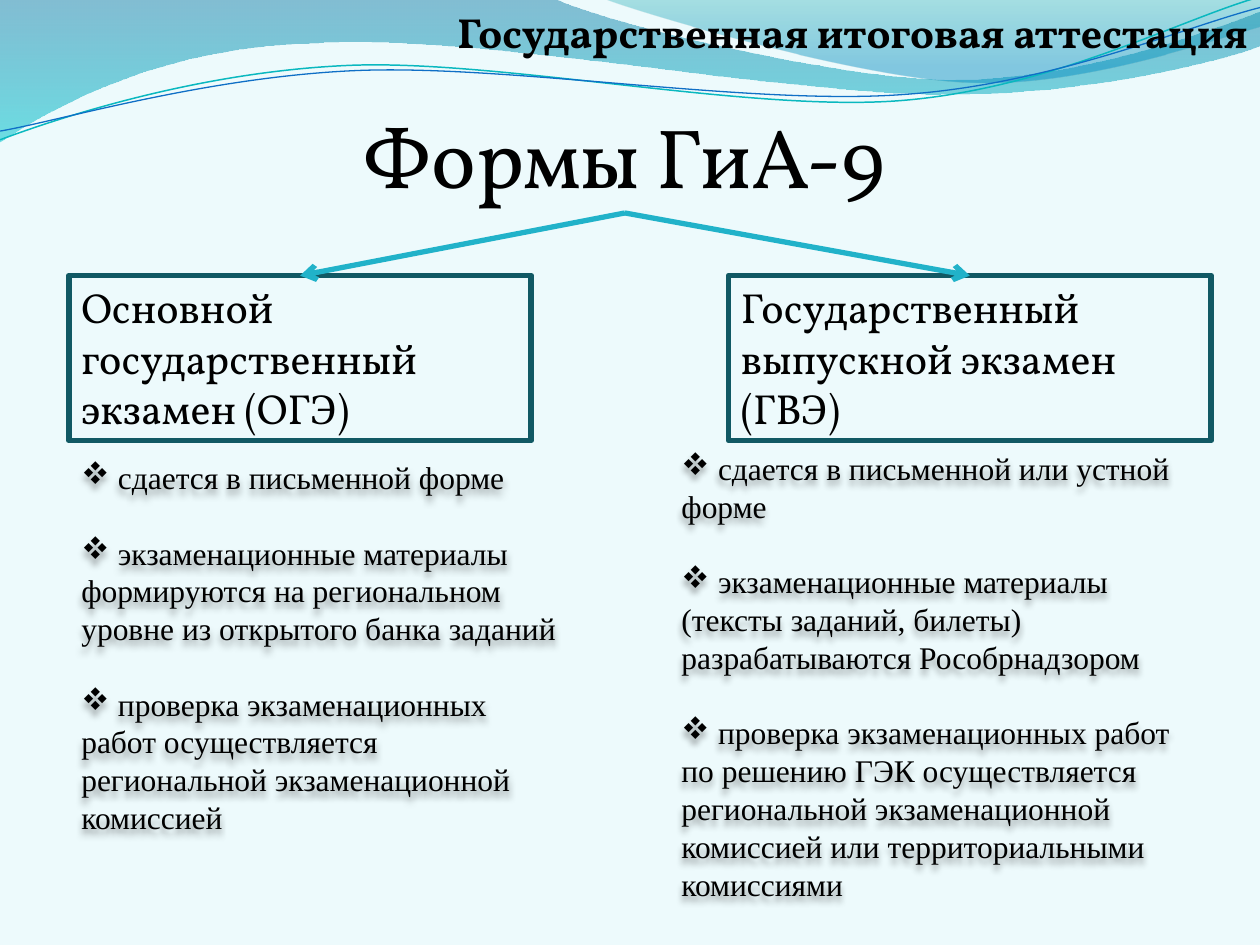
from collections import namedtuple

from lxml.etree import SubElement
from pptx import Presentation
from pptx.dml.color import RGBColor
from pptx.enum.shapes import MSO_CONNECTOR, MSO_SHAPE
from pptx.enum.text import MSO_ANCHOR, PP_ALIGN
from pptx.oxml.ns import qn
from pptx.util import Pt

Box = namedtuple("Box", "left top width height")

BACKGROUND = "EDFAFC"
INK = "000000"
FRAME = "115964"
ARROW = "21B2C9"
SERIF = "Vollkorn"
BODY = "Times New Roman"

WAVES = [
    ([(0, 0), (316.8, -0.7), (342.7, 12.2, 478.1, 45.4, 545.8, 45.4),
      (614.2, 45.4, 689.8, 18.7, 720, 6.5), (720.7, 25.9),
      (707.8, 31.7, 626.4, 54.7, 537.1, 54), (447.8, 54, 275, 20.2, 185, 24.5),
      (92.9, 25.9, 33.1, 59.8, -0.7, 81.4)],
     [(0, "0074A1", 45), (1, "00C6CF", 55)]),
    ([(344.9, -0.7), (366.5, 7.9, 491, 44.6, 553.7, 46.8),
      (616.3, 49.7, 691.9, 23, 720, 15.1), (720, 0)],
     [(0, "00A1A9", 30), (0.8, "008BBF", 45)]),
]
STRANDS = [
    ([(0, 79.9), (34.6, 67, 113.8, 41, 199.4, 37.4), (284.4, 33.8, 427, 64.1, 513.4, 57.6),
      (599.8, 51.1, 675.4, 10.8, 718.6, -1.4)], "0AB8BF", 0.85),
    ([(0, 74.9), (33.8, 69.1, 118.1, 43.9, 203.8, 40.3), (290.2, 36.7, 429.8, 60.5, 516.2, 54),
      (601.9, 48.2, 677.5, 15.1, 720, 4.3)], "0F6FC6", 0.75),
]

OGE_POINTS = [
    "сдается в письменной форме",
    "экзаменационные материалы формируются на региональном уровне из открытого банка заданий",
    "проверка экзаменационных работ осуществляется региональной экзаменационной комиссией",
]
GVE_POINTS = [
    "сдается в письменной или устной форме",
    "экзаменационные материалы (тексты заданий, билеты) разрабатываются Рособрнадзором",
    "проверка экзаменационных работ по решению ГЭК осуществляется региональной "
    "экзаменационной комиссией или территориальными комиссиями",
]


def rgb(value):
    return RGBColor.from_string(value)


def emu(box):
    return [Pt(length) for length in box]


def style(paragraph, size, font, bold=False, align=PP_ALIGN.LEFT):
    paragraph.alignment = align
    for run in paragraph.runs:
        run.font.size = Pt(size)
        run.font.name = font
        run.font.bold = bold
        run.font.color.rgb = rgb(INK)


def add_outline(slide, box, segments, close):
    anchors = [(Pt(box.left + segment[-2]), Pt(box.top + segment[-1])) for segment in segments]
    builder = slide.shapes.build_freeform(*anchors[0])
    builder.add_line_segments(anchors[1:], close=close)
    outline = builder.convert_to_shape()
    outline.shadow.inherit = False
    sides = list(outline._element.iter(qn("a:lnTo")))
    for side, segment in zip(sides, segments[1:]):
        if len(segment) == 6:
            side.tag = qn("a:cubicBezTo")
            handles = [SubElement(side, qn("a:pt")) for _ in range(2)]
            side.append(side[0])
            for handle, x, y in zip(handles, segment[0:4:2], segment[1:4:2]):
                handle.set("x", str(Pt(box.left + x) - outline.left))
                handle.set("y", str(Pt(box.top + y) - outline.top))
    return outline


def add_waves(slide, box):
    for segments, stops in WAVES:
        wave = add_outline(slide, box, segments, True)
        wave.line.fill.background()
        wave.fill.gradient()
        wave.fill.gradient_angle = 270
        for stop, (position, color, _) in zip(wave.fill.gradient_stops, stops):
            stop.position = position
            stop.color.rgb = rgb(color)
        for color_element, (_, _, opacity) in zip(wave._element.iter(qn("a:srgbClr")), stops):
            SubElement(color_element, qn("a:alpha"), val=str(opacity * 1000))
    for segments, color, width in STRANDS:
        strand = add_outline(slide, box, segments, False)
        strand.fill.background()
        strand.line.color.rgb = rgb(color)
        strand.line.width = Pt(width)


def add_title(slide, box, text, size, bold, align):
    title = slide.shapes.add_textbox(*emu(box)).text_frame
    title.word_wrap = True
    title.text = text
    style(title.paragraphs[0], size, SERIF, bold, align)


def add_heading(slide, box, text):
    heading = slide.shapes.add_shape(MSO_SHAPE.RECTANGLE, *emu(box))
    heading.shadow.inherit = False
    heading.fill.background()
    heading.line.color.rgb = rgb(FRAME)
    heading.line.width = Pt(3.25)
    heading.text_frame.word_wrap = True
    heading.text_frame.vertical_anchor = MSO_ANCHOR.TOP
    heading.text_frame.text = text
    style(heading.text_frame.paragraphs[0], 24, SERIF)


def add_arrow(slide, start, end):
    arrow = slide.shapes.add_connector(MSO_CONNECTOR.STRAIGHT, *emu(start + end))
    arrow.line.color.rgb = rgb(ARROW)
    arrow.line.width = Pt(3)
    SubElement(arrow.line._get_or_add_ln(), qn("a:tailEnd"), type="arrow")
    SubElement(arrow._element.spPr, qn("a:effectLst"))


def add_soft_shadow(shape):
    effects = SubElement(shape._element.spPr, qn("a:effectLst"))
    shadow = SubElement(effects, qn("a:outerShdw"), blurRad=str(Pt(4)), dist=str(Pt(3)),
                        dir="5400000", algn="t", rotWithShape="0")
    color = SubElement(shadow, qn("a:srgbClr"), val=INK)
    SubElement(color, qn("a:alpha"), val="40000")


def add_points(slide, box, points):
    listing = slide.shapes.add_textbox(*emu(box))
    add_soft_shadow(listing)
    frame = listing.text_frame
    frame.word_wrap = True
    for index, point in enumerate(points):
        paragraph = frame.paragraphs[0] if index == 0 else frame.add_paragraph()
        paragraph.text = " " + point
        paragraph.space_before = Pt(21.5 if index else 0)
        style(paragraph, 18, BODY)
        properties = paragraph._p.get_or_add_pPr()
        SubElement(properties, qn("a:buFont"), typeface="Wingdings", charset="2")
        SubElement(properties, qn("a:buChar"), char="v")


def add_exam_column(slide, box, apex, heading, heading_left, heading_width, points, points_top):
    heading_box = Box(box.left + heading_left, box.top, heading_width, 94.3)
    add_heading(slide, heading_box, heading)
    add_arrow(slide, apex, (heading_box.left + heading_width / 2, box.top))
    add_points(slide, Box(box.left, box.top + points_top, box.width, box.height - points_top),
               points)


def main():
    deck = Presentation()
    deck.slide_width, deck.slide_height = Pt(720), Pt(540)
    slide = deck.slides.add_slide(deck.slide_layouts[6])
    slide.background.fill.solid()
    slide.background.fill.fore_color.rgb = rgb(BACKGROUND)
    add_waves(slide, Box(0, 0, 720, 82))
    add_title(slide, Box(230.4, 0, 489.6, 36), "Государственная итоговая аттестация",
              24, True, PP_ALIGN.RIGHT)
    add_title(slide, Box(168.7, 56.2, 376.6, 65.5), "Формы ГиА-9", 48, False, PP_ALIGN.CENTER)
    apex = (357.1, 121.7)
    add_exam_column(slide, Box(39.4, 157.5, 292.3, 347.8), apex,
                    "Основной государственный экзамен (ОГЭ)", 0, 264.2, OGE_POINTS, 100.8)
    add_exam_column(slide, Box(382.3, 157.5, 309.6, 365), apex,
                    "Государственный выпускной экзамен (ГВЭ)", 34, 275.8, GVE_POINTS, 95.7)
    deck.save("out.pptx")


if __name__ == "__main__":
    main()
